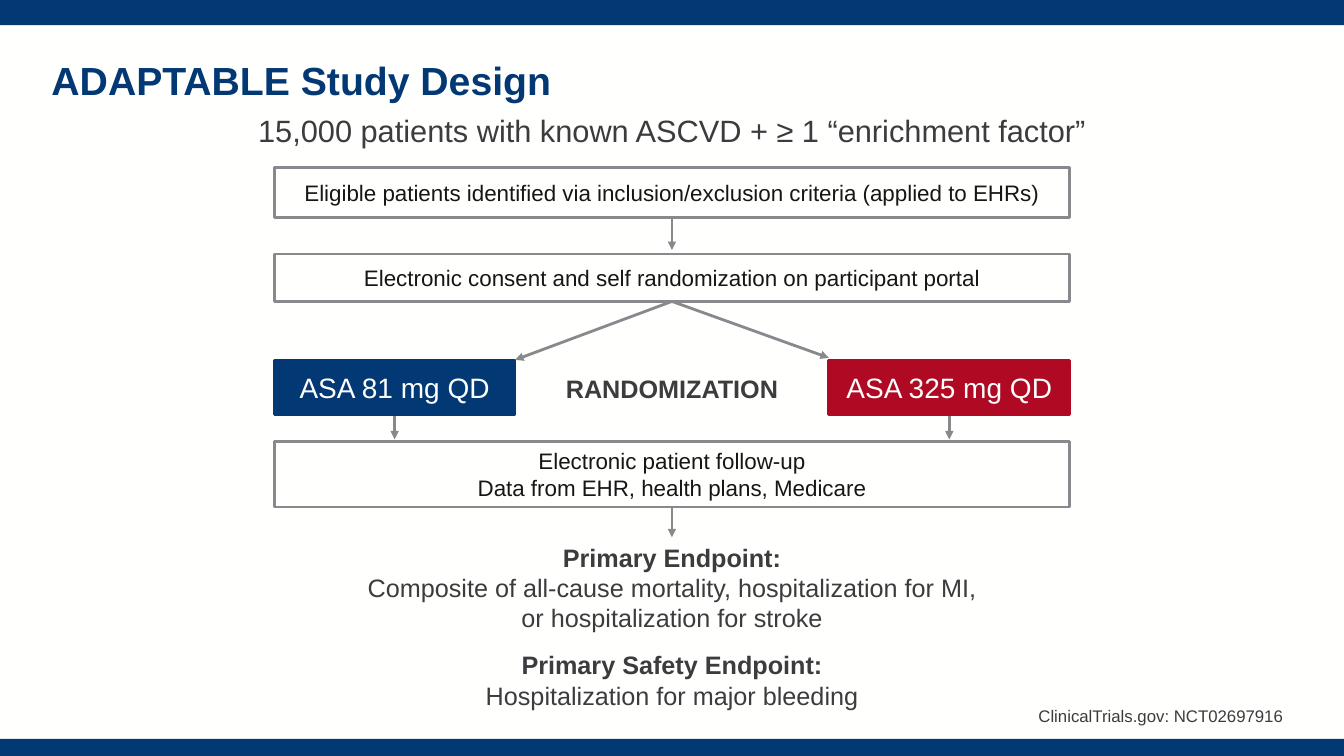
from dataclasses import dataclass
from typing import NamedTuple

import pptx
import pptx.dml.color
import pptx.enum.shapes
import pptx.enum.text
import pptx.oxml.ns
import pptx.util
from lxml import etree

RGBColor = pptx.dml.color.RGBColor
Align = pptx.enum.text.PP_ALIGN
Anchor = pptx.enum.text.MSO_ANCHOR

NAVY = RGBColor(0x02, 0x38, 0x73)
RED = RGBColor(0xAF, 0x09, 0x23)
GREY = RGBColor(0x87, 0x89, 0x8D)
CHARCOAL = RGBColor(0x3B, 0x3C, 0x3E)
INK = RGBColor(0x16, 0x16, 0x16)
PAPER = RGBColor(0xFF, 0xFF, 0xFE)

FONT = "Arial"
LINE_WIDTH = pptx.util.Pt(2)
SLIDE_WIDTH = pptx.util.Inches(13.333)
SLIDE_HEIGHT = pptx.util.Inches(7.5)

# The grid has 100 columns and 100 rows.
FLOW_LEFT, FLOW_WIDTH = 20.4, 59.2
FLOW_RIGHT = FLOW_LEFT + FLOW_WIDTH
MIDDLE = 50
ARM_WIDTH = 17.93


def across(columns: float) -> int:
    return round(SLIDE_WIDTH * columns / 100)


def down(rows: float) -> int:
    return round(SLIDE_HEIGHT * rows / 100)


class Area(NamedTuple):
    """Left, top, width and height in grid columns and rows."""
    left: float
    top: float
    width: float
    height: float

    @property
    def bottom(self) -> float:
        return self.top + self.height

    @property
    def center(self) -> float:
        return self.left + self.width / 2

    def lengths(self) -> tuple:
        return across(self.left), down(self.top), across(self.width), down(self.height)


class Span(NamedTuple):
    text: str
    bold: bool = False


@dataclass
class Step:
    area: Area
    paragraphs: list
    fill: RGBColor = PAPER
    outline: RGBColor = GREY
    color: RGBColor = INK
    size: float = 16


@dataclass
class Arrow:
    start: tuple
    end: tuple


@dataclass
class Label:
    area: Area
    paragraphs: list
    size: float
    align: Align = Align.CENTER


ELIGIBLE = Area(FLOW_LEFT, 22.13, FLOW_WIDTH, 6.67)
CONSENT = Area(FLOW_LEFT, 33.6, FLOW_WIDTH, 6.27)
LOW_DOSE = Area(FLOW_LEFT, 47.73, ARM_WIDTH, 7.07)
HIGH_DOSE = LOW_DOSE._replace(left=FLOW_RIGHT - ARM_WIDTH)
FOLLOW_UP = Area(FLOW_LEFT, 58.4, FLOW_WIDTH, 8.67)
ENDPOINTS = Area(FLOW_LEFT, 71.07, FLOW_WIDTH, 23.73)

BARS = [Area(0, 0, 100, 3.33), Area(0, 97.73, 100, 2.27)]

ARROWS = [
    Arrow((MIDDLE, ELIGIBLE.bottom), (MIDDLE, 33.07)),
    Arrow((MIDDLE, CONSENT.bottom), (LOW_DOSE.left + ARM_WIDTH, 47.6)),
    Arrow((MIDDLE, CONSENT.bottom), (HIGH_DOSE.left, 47.33)),
    Arrow((LOW_DOSE.center, LOW_DOSE.bottom), (LOW_DOSE.center, 58.13)),
    Arrow((HIGH_DOSE.center, HIGH_DOSE.bottom), (HIGH_DOSE.center, 58.13)),
    Arrow((MIDDLE, FOLLOW_UP.bottom), (MIDDLE, ENDPOINTS.top)),
]

STEPS = [
    Step(ELIGIBLE, [[Span("Eligible patients identified via inclusion/exclusion criteria "
                          "(applied to EHRs)")]]),
    Step(CONSENT, [[Span("Electronic consent and self randomization on participant portal")]]),
    Step(LOW_DOSE, [[Span("ASA 81 mg QD")]], NAVY, NAVY, PAPER, 20),
    Step(HIGH_DOSE, [[Span("ASA 325 mg QD")]], RED, RED, PAPER, 20),
    Step(FOLLOW_UP, [[Span("Electronic patient follow-up")],
                     [Span("Data from EHR, health plans, Medicare")]]),
]

LABELS = [
    Label(Area(41.25, 48.67, 17.5, 5.33), [[Span("RANDOMIZATION", True)]], 18),
    Label(ENDPOINTS, [
        [Span("Primary Endpoint:", True),
         Span("Composite of all-cause mortality, hospitalization for MI,"),
         Span("or hospitalization for stroke")],
        [Span("Primary Safety Endpoint:", True),
         Span("Hospitalization for major bleeding")],
    ], 18),
    Label(Area(72.75, 92.67, 23.48, 4), [[Span("ClinicalTrials.gov: NCT02697916")]],
          12, Align.RIGHT),
]


def write_text(shape, paragraphs: list, *, size: float, color: RGBColor,
               align: Align = Align.CENTER, anchor: Anchor = Anchor.TOP,
               line_spacing: float = 1.0, gap: float = 0) -> None:
    """Write each paragraph as spans, one span to a line."""
    frame = shape.text_frame
    frame.word_wrap = True
    frame.auto_size = pptx.enum.text.MSO_AUTO_SIZE.NONE
    frame.vertical_anchor = anchor
    for index, spans in enumerate(paragraphs):
        para = frame.add_paragraph() if index else frame.paragraphs[0]
        para.alignment = align
        para.line_spacing = line_spacing
        para.space_before = pptx.util.Pt(gap if index else 0)
        for position, span in enumerate(spans):
            if position:
                para.add_line_break()
            run = para.add_run()
            run.text = span.text
            run.font.name = FONT
            run.font.size = pptx.util.Pt(size)
            run.font.bold = span.bold
            run.font.color.rgb = color


def place_placeholder(shape, area: Area, bottom_inset: float = 0) -> None:
    shape.left, shape.top, shape.width, shape.height = area.lengths()
    frame = shape.text_frame
    frame.margin_left = frame.margin_right = frame.margin_top = 0
    frame.margin_bottom = down(bottom_inset)


def remove_bullet(para) -> None:
    properties = para._p.get_or_add_pPr()
    properties.set("marL", "0")
    properties.set("indent", "0")
    etree.SubElement(properties, pptx.oxml.ns.qn("a:buNone"))


def draw_box(slide, area: Area, fill: RGBColor, outline: RGBColor | None = None):
    box = slide.shapes.add_shape(pptx.enum.shapes.MSO_SHAPE.RECTANGLE, *area.lengths())
    box.shadow.inherit = False
    box.fill.solid()
    box.fill.fore_color.rgb = fill
    if outline is None:
        box.line.fill.background()
    else:
        box.line.color.rgb = outline
        box.line.width = LINE_WIDTH
    return box


def draw_arrow(slide, arrow: Arrow) -> None:
    connector = slide.shapes.add_connector(
        pptx.enum.shapes.MSO_CONNECTOR.STRAIGHT,
        across(arrow.start[0]), down(arrow.start[1]),
        across(arrow.end[0]), down(arrow.end[1]))
    connector.line.color.rgb = GREY
    connector.line.width = LINE_WIDTH
    outline = connector.line._get_or_add_ln()
    etree.SubElement(outline, pptx.oxml.ns.qn("a:tailEnd"), type="triangle")
    etree.SubElement(connector._element.spPr, pptx.oxml.ns.qn("a:effectLst"))


def main() -> None:
    deck = pptx.Presentation()
    deck.slide_width, deck.slide_height = SLIDE_WIDTH, SLIDE_HEIGHT
    page = deck.slides.add_slide(deck.slide_layouts[1])
    page.background.fill.solid()
    page.background.fill.fore_color.rgb = PAPER

    for bar in BARS:
        draw_box(page, bar, NAVY)

    title, body = page.shapes.title, page.placeholders[1]
    place_placeholder(title, Area(3.83, 2.53, 83.55, 16.67), bottom_inset=5.4)
    write_text(title, [[Span("ADAPTABLE Study Design", True)]], size=28, color=NAVY,
               align=Align.LEFT, anchor=Anchor.BOTTOM, line_spacing=0.9)
    place_placeholder(body, Area(8.23, 15.07, 83.55, 4.67))
    write_text(body, [[Span("15,000 patients with known ASCVD + ≥ 1 “enrichment factor”")]],
               size=22, color=CHARCOAL, line_spacing=0.95)
    remove_bullet(body.text_frame.paragraphs[0])

    for arrow in ARROWS:
        draw_arrow(page, arrow)
    for step in STEPS:
        box = draw_box(page, step.area, step.fill, step.outline)
        write_text(box, step.paragraphs, size=step.size, color=step.color, anchor=Anchor.MIDDLE)
    for label in LABELS:
        box = page.shapes.add_textbox(*label.area.lengths())
        write_text(box, label.paragraphs, size=label.size, color=CHARCOAL,
                   align=label.align, gap=12)

    deck.save("out.pptx")


if __name__ == "__main__":
    main()
